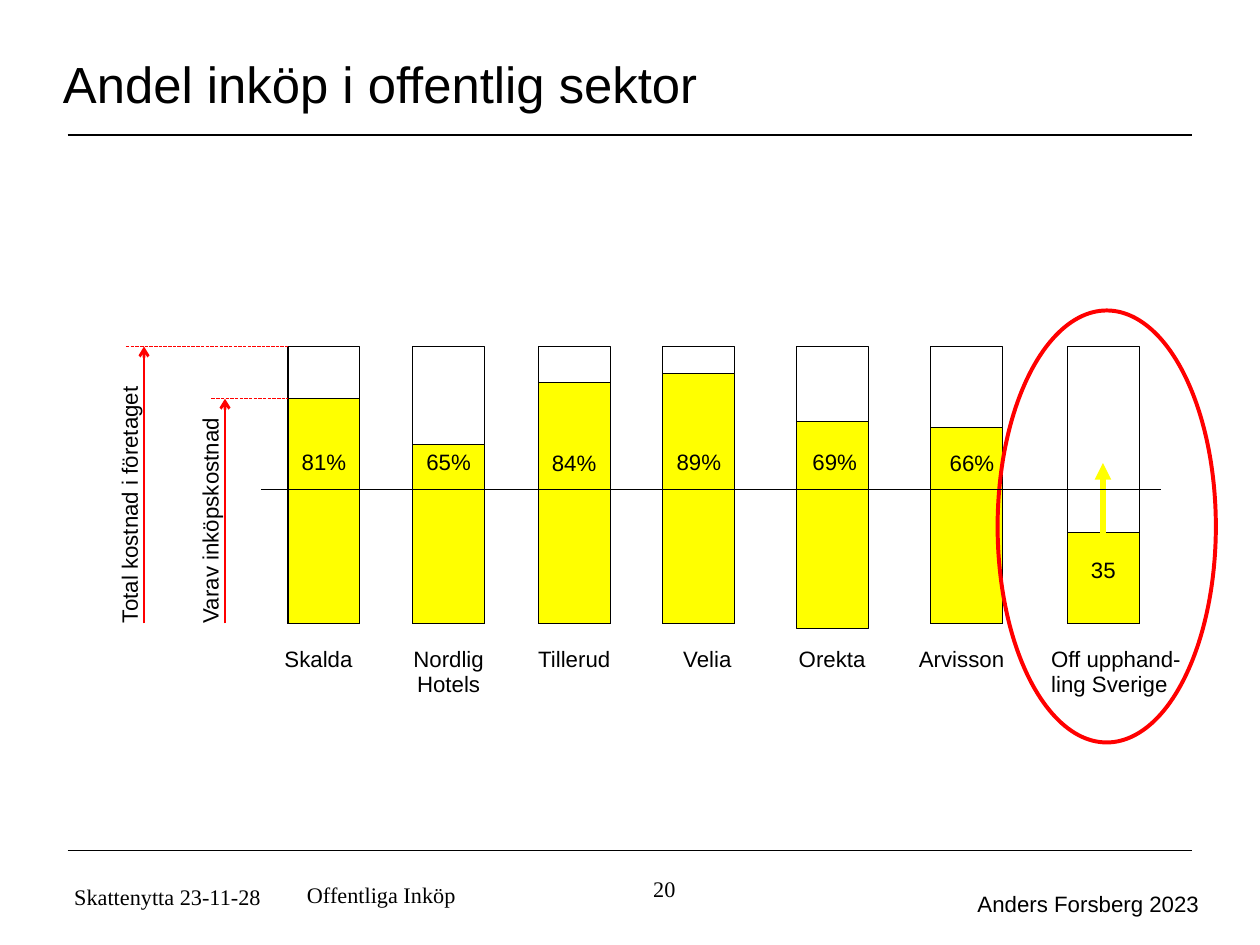
from lxml.etree import SubElement
from pptx import Presentation
from pptx.dml.color import RGBColor
from pptx.enum.dml import MSO_LINE
from pptx.enum.shapes import MSO_CONNECTOR, MSO_SHAPE
from pptx.enum.text import MSO_ANCHOR, PP_ALIGN
from pptx.oxml.ns import qn
from pptx.util import Cm, Pt

BLACK, RED, YELLOW = "000000", "FF0000", "FFFF00"
SANS, SERIF = "Arial", "Times New Roman"
LEFT, CENTER, RIGHT = PP_ALIGN.LEFT, PP_ALIGN.CENTER, PP_ALIGN.RIGHT

TITLE = "Andel inköp i offentlig sektor"
BAR_TOP, BAR_BOTTOM, BAR_WIDTH = 7.7, 13.85, 1.6
TEXT_HEIGHT = 0.81

# name, bar left, fill top, fill bottom, value, value left, value top, label left, label width, alignment
BARS = [
    ("Skalda", 6.4, 8.86, 13.85, "81%", 6.4, 9.88, 5.99, 2.18, CENTER),
    ("Nordlig Hotels", 9.17, 9.87, 13.85, "65%", 9.17, 9.88, 8.74, 2.46, CENTER),
    ("Tillerud", 11.96, 8.5, 13.85, "84%", 11.96, 9.9, 11.71, 2.46, LEFT),
    ("Velia", 14.73, 8.3, 13.85, "89%", 14.73, 9.88, 14.63, 2.18, CENTER),
    ("Orekta", 17.7, 9.37, 13.97, "69%", 17.75, 9.88, 17.5, 2.18, LEFT),
    ("Arvisson", 20.68, 9.5, 13.85, "66%", 20.8, 9.9, 20.14, 2.46, CENTER),
    ("Off upphand-ling Sverige", 23.72, 11.84, 13.85, "35", 23.72, 12.29, 23.11, 3.68, LEFT),
]
AXIS_LABELS = [
    ("Total kostnad i företaget", -0.2, 10.59, 6.2),
    ("Varav inköpskostnad", 1.8, 10.8, 5.79),
]
COST_ARROWS = [(3.2, 2.8, BAR_TOP), (5.0, 4.7, 8.86)]
FOOTERS = [
    ("Skattenytta 23-11-28", 1.4, 19.5, 5.1, LEFT, SERIF, 1, (0.25, 0.13)),
    ("Offentliga Inköp", 6.76, 19.63, 3.43, CENTER, SERIF, 0.95, (0, 0)),
    ("20", 10.46, 19.5, 4.55, RIGHT, SERIF, 0.95, (0, 0)),
    ("Anders Forsberg 2023", 18.8, 19.69, 8.1, RIGHT, SANS, 0.93, (0.25, 0.15)),
]


def color(value):
    return RGBColor.from_string(value)


def style_text(frame, text, size=14, font=SANS, align=LEFT, spacing=0.93, insets=(0.25, 0.13)):
    frame.text = text
    frame.word_wrap = True
    frame.margin_left = frame.margin_right = Cm(insets[0])
    frame.margin_top = frame.margin_bottom = Cm(insets[1])
    para = frame.paragraphs[0]
    para.alignment = align
    para.line_spacing = spacing
    span = para.runs[0]
    span.font.size = Pt(size)
    span.font.name = font
    span.font.color.rgb = color(BLACK)


def add_text(page, text, left, top, width, height=TEXT_HEIGHT, **style):
    box = page.shapes.add_textbox(Cm(left), Cm(top), Cm(width), Cm(height))
    style_text(box.text_frame, text, **style)
    return box


def add_outline(page, kind, left, top, width, height, line=BLACK, weight=0.75, fill=None):
    shape = page.shapes.add_shape(kind, Cm(left), Cm(top), Cm(width), Cm(height))
    shape.shadow.inherit = False
    shape.line.color.rgb = color(line)
    shape.line.width = Pt(weight)
    if fill:
        shape.fill.solid()
        shape.fill.fore_color.rgb = color(fill)
    else:
        shape.fill.background()


def add_line(page, start, end, line=BLACK, weight=0.75, dashed=False, arrow=None):
    connector = page.shapes.add_connector(
        MSO_CONNECTOR.STRAIGHT, Cm(start[0]), Cm(start[1]), Cm(end[0]), Cm(end[1]))
    connector.line.color.rgb = color(line)
    connector.line.width = Pt(weight)
    if dashed:
        connector.line.dash_style = MSO_LINE.SQUARE_DOT
    properties = connector._element.spPr
    if arrow:
        SubElement(properties.find(qn("a:ln")), qn("a:tailEnd"), type=arrow)
    SubElement(properties, qn("a:effectLst"))


def add_bar(page, bar):
    name, left, fill_top, fill_bottom, value, value_left, value_top, label_left, label_width, align = bar
    add_outline(page, MSO_SHAPE.RECTANGLE, left, BAR_TOP, BAR_WIDTH, BAR_BOTTOM - BAR_TOP)
    add_outline(page, MSO_SHAPE.RECTANGLE, left, fill_top, BAR_WIDTH, fill_bottom - fill_top, fill=YELLOW)
    add_text(page, value, value_left, value_top, BAR_WIDTH, align=CENTER)
    add_text(page, name, label_left, 14.26, label_width, align=align)


def main():
    deck = Presentation()
    deck.slide_width, deck.slide_height = Cm(28), Cm(21)
    page = deck.slides.add_slide(deck.slide_layouts[5])

    title = page.shapes.title
    title.left, title.top, title.width, title.height = Cm(1.4), Cm(0.84), Cm(25.1), Cm(2.16)
    style_text(title.text_frame, TITLE, size=32, insets=(0, 0.04))
    title.text_frame.vertical_anchor = MSO_ANCHOR.MIDDLE

    for height in (3, 18.9):
        add_line(page, (1.5, height), (26.5, height))
    for text, left, top, width, align, font, spacing, insets in FOOTERS:
        add_text(page, text, left, top, width, align=align, font=font, spacing=spacing, insets=insets)

    for bar in BARS:
        add_bar(page, bar)
    add_line(page, (24.51, 11.91), (24.51, 10.29), YELLOW, 3.5, arrow="triangle")

    for left, guide_left, top in COST_ARROWS:
        add_line(page, (left, BAR_BOTTOM), (left, top), RED, 1.75, arrow="arrow")
        add_line(page, (guide_left, top), (BARS[0][1], top), RED, dashed=True)
    for text, left, top, width in AXIS_LABELS:
        add_text(page, text, left, top, width).rotation = 270

    add_outline(page, MSO_SHAPE.OVAL, 22.17, 6.9, 4.85, 9.6, line=RED, weight=2.5)
    add_line(page, (5.8, 10.87), (25.8, 10.87))
    deck.save("out.pptx")


if __name__ == "__main__":
    main()
